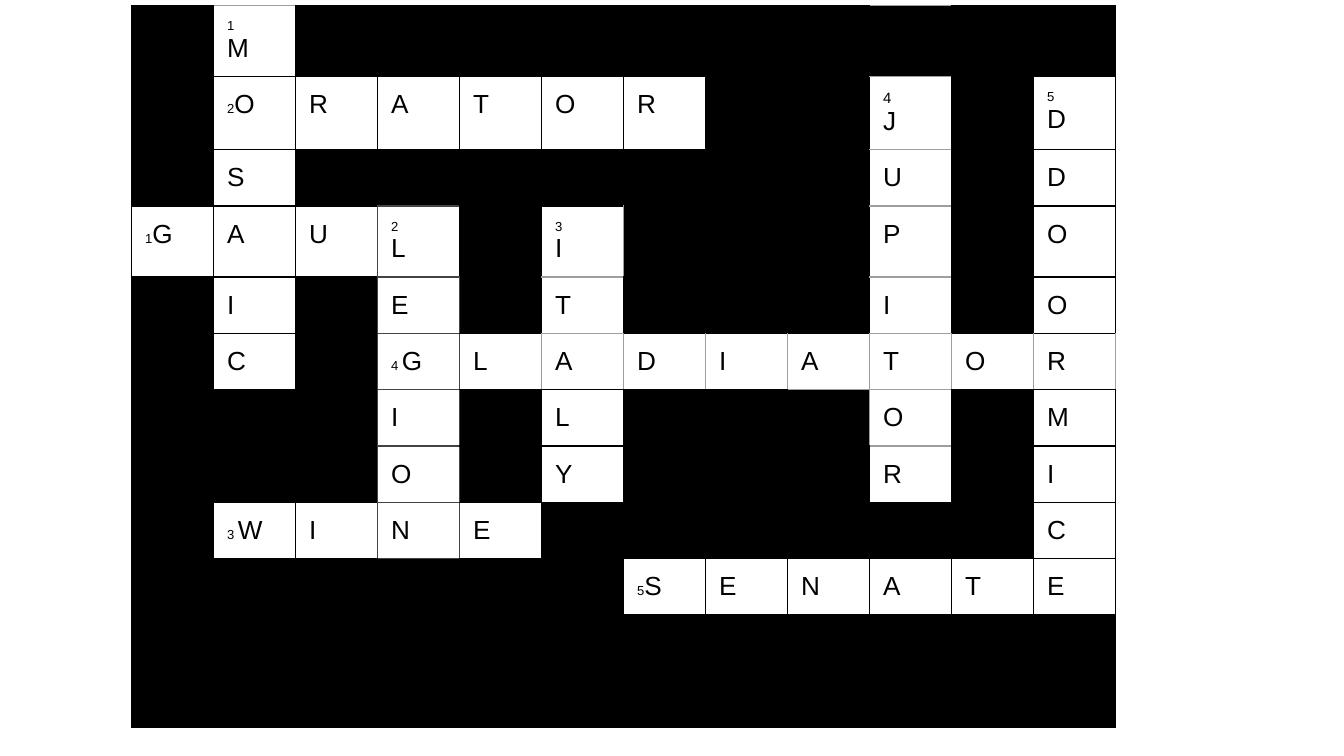
"""Build a crossword slide as one bordered table."""
from lxml.etree import SubElement
from pptx import Presentation
from pptx.dml.color import RGBColor
from pptx.oxml.ns import qn
from pptx.util import Pt

BLACK, WHITE, DARK, PALE = "000000", "FFFFFF", "434343", "9E9E9E"
ROWS = [38.1, 39.1, 30.15, 38.1] + [30.15] * 8
COLS = [43.95] * 12
ACROSS = [("2", "ORATOR", 1, 1), ("1", "GAUL", 3, 0), ("4 ", "GLADIATOR", 5, 3),
          ("3 ", "WINE", 8, 1), ("5", "SENATE", 9, 6)]
DOWN = [("1", "MOSAIC", 0, 1), ("2", "LEGION", 3, 3), ("3", "ITALY", 3, 5),
        ("4", "JUPITOR", 1, 9), ("5", "DDOORMICE", 1, 11)]


def color(code):
    return RGBColor.from_string(code)


def letters():
    grid = {}
    for words, down in ((ACROSS, 0), (DOWN, 1)):
        for _, word, row, col in words:
            for step, char in enumerate(word):
                grid[row + step * down, col + step * (1 - down)] = char
    return grid


def edges():
    tops = {(row, 3): DARK for row in range(3, 10)}
    tops.update({(row, 9): PALE for row in range(8)})
    tops.update(dict.fromkeys([(0, 1), (4, 5), (5, 5), (6, 8)], PALE))
    lefts = {(row, col): DARK for row in range(3, 9) for col in (3, 4)}
    lefts[3, 4] = BLACK
    lefts.update({(5, col): PALE for col in range(5, 13)})
    lefts.update(dict.fromkeys([(3, 6), (6, 9)], PALE))
    return tops, lefts


class Board:
    def __init__(self, deck):
        self.font, self.size, self.small = "Arial", 14, 7
        self.slide = deck.slides.add_slide(deck.slide_layouts[6])

    def table(self, left, top, rows, cols):
        frame = self.slide.shapes.add_table(len(rows), len(cols), Pt(left), Pt(top),
                                            Pt(sum(cols)), Pt(sum(rows)))
        table = frame.table
        table.first_row = table.horz_banding = False
        for row, height in zip(table.rows, rows):
            row.height = Pt(height)
        for col, width in zip(table.columns, cols):
            col.width = Pt(width)
        return table

    def border(self, cell, sides):
        props = cell._tc.get_or_add_tcPr()
        for side, code in zip("LRTB", sides):
            line = SubElement(props, qn(f"a:ln{side}"), w=str(Pt(0.75)))
            fill = SubElement(line, qn("a:solidFill"))
            SubElement(fill, qn("a:srgbClr"), val=code)

    def fill(self, cell, code, inset):
        cell.fill.solid()
        cell.fill.fore_color.rgb = color(code)
        cell.margin_left = cell.margin_right = Pt(inset)
        cell.margin_top = cell.margin_bottom = Pt(inset)

    def label(self, para, *parts):
        para.font.name = self.font
        para.font.color.rgb = color(BLACK)
        for text, size in parts:
            run = para.add_run()
            run.text = text
            font = run.font if len(parts) > 1 else para.font
            font.size = Pt(size)

    def letter(self, cell, char, across, down):
        frame = cell.text_frame
        para = frame.paragraphs[0]
        main = (char, self.size)
        if across:
            self.label(para, (across, self.small), main)
        elif down:
            self.label(para, (down, 8 if down == "4" else self.small))
            self.label(frame.add_paragraph(), main)
        else:
            self.label(para, main)


def main():
    deck = Presentation()
    deck.slide_width, deck.slide_height = Pt(720), Pt(405)
    board = Board(deck)
    table = board.table(70.5, 2.9, ROWS, COLS)
    grid = letters()
    tops, lefts = edges()
    across, down = ({(row, col): mark for mark, _, row, col in words}
                    for words in (ACROSS, DOWN))
    for row in range(len(ROWS)):
        for col in range(len(COLS)):
            cell, spot = table.cell(row, col), (row, col)
            board.border(cell, (lefts.get(spot, BLACK), lefts.get((row, col + 1), BLACK),
                                tops.get(spot, BLACK), tops.get((row + 1, col), BLACK)))
            if spot in grid:
                board.fill(cell, WHITE, 7.2)
                board.letter(cell, grid[spot], across.get(spot), down.get(spot))
            else:
                board.fill(cell, BLACK, 0)
    deck.save("out.pptx")


if __name__ == "__main__":
    main()
